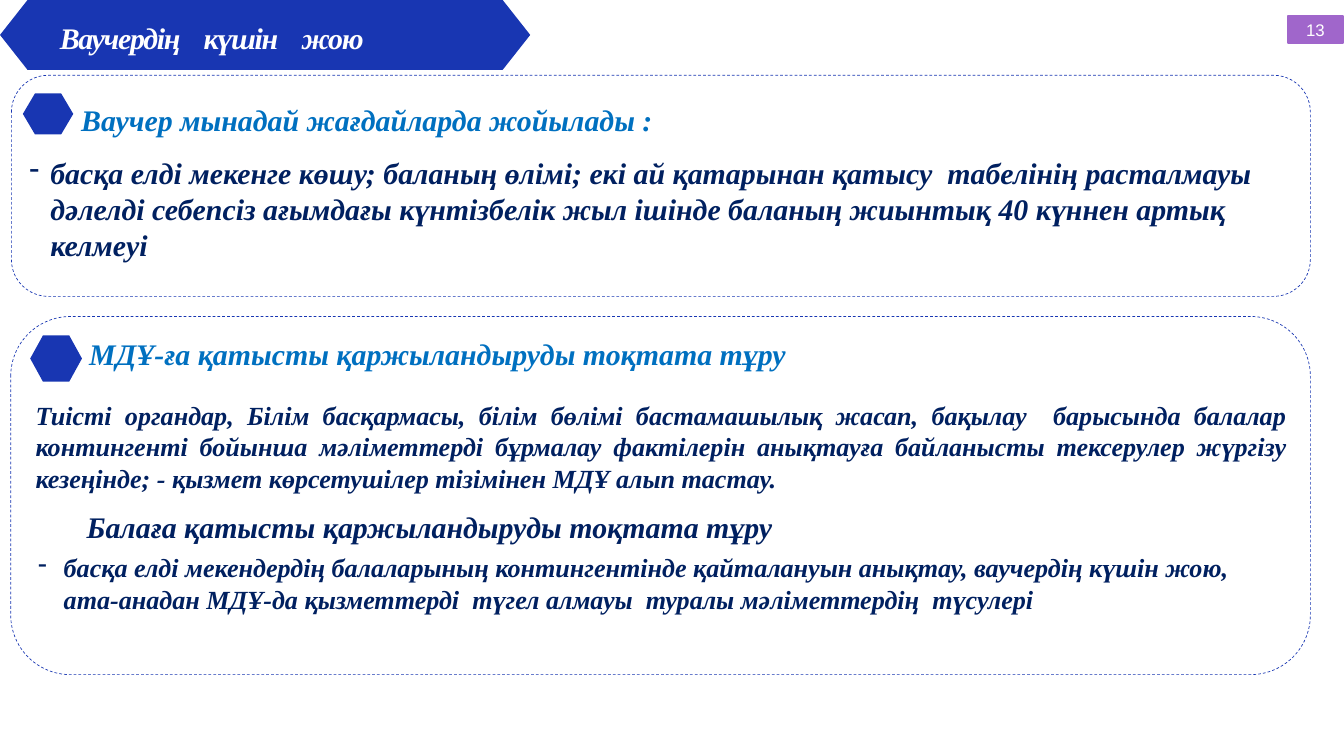
from lxml import etree
from pptx import Presentation
from pptx import util as u
from pptx.dml.color import RGBColor
from pptx.enum import dml, shapes, text
from pptx.oxml.ns import qn

BLUE, SKY, NAVY, WHITE, PURPLE = "1836B2", "0070C0", "002060", "FFFFFF", "A066CB"
SERIF = "Times New Roman"


def rgb(value):
    return RGBColor.from_string(value)


def add_run(p, words, size, color, font=SERIF, strong=True):
    r = p.add_run()
    r.text = words
    r.font.name = font
    r.font.size = u.Pt(size)
    r.font.bold = r.font.italic = strong
    r.font.color.rgb = rgb(color)
    return r


def add_text(s, box, words, size, color, wrap=True, align=text.PP_ALIGN.LEFT):
    sp = s.shapes.add_textbox(*map(u.Inches, box))
    tf = sp.text_frame
    tf.word_wrap = wrap
    p = tf.paragraphs[0]
    p.alignment = align
    add_run(p, words, size, color)
    return sp


def add_dash_item(s, box, words, size, indent):
    sp = add_text(s, box, words, size, NAVY)
    pPr = sp.text_frame.paragraphs[0]._p.get_or_add_pPr()
    pPr.set("marL", str(u.Inches(indent)))
    pPr.set("indent", str(-u.Inches(indent)))
    etree.SubElement(pPr, qn("a:buChar")).set("char", "-")


def add_title(s, box, words, stops):
    sp = add_text(s, box, "\t".join(words), 32, WHITE)
    tf = sp.text_frame
    tf.margin_left = tf.margin_right = tf.margin_top = tf.margin_bottom = 0
    p = tf.paragraphs[0]
    p.runs[0]._r.get_or_add_rPr().set("spc", "-140")
    tabs = etree.SubElement(p._p.get_or_add_pPr(), qn("a:tabLst"))
    for stop in stops:
        tab = etree.SubElement(tabs, qn("a:tab"))
        tab.set("pos", str(u.Inches(stop)))
        tab.set("algn", "l")


def add_hexagon(s, x, y, w, h, inset):
    points = [(x + inset, y), (x + w - inset, y), (x + w, y + h / 2),
              (x + w - inset, y + h), (x + inset, y + h), (x, y + h / 2)]
    points = [(u.Inches(px), u.Inches(py)) for px, py in points]
    fb = s.shapes.build_freeform(*points[0])
    fb.add_line_segments(points[1:], close=True)
    sp = fb.convert_to_shape()
    sp.shadow.inherit = False
    sp.fill.solid()
    sp.fill.fore_color.rgb = rgb(BLUE)
    sp.line.fill.background()


def add_panel(s, box):
    sp = s.shapes.add_shape(shapes.MSO_SHAPE.ROUNDED_RECTANGLE, *map(u.Inches, box))
    sp.shadow.inherit = False
    sp.fill.background()
    sp.line.color.rgb = rgb(BLUE)
    sp.line.width = u.Pt(0.75)
    sp.line.dash_style = dml.MSO_LINE.DASH


def add_page_number(s, box, number):
    sp = s.shapes.add_shape(shapes.MSO_SHAPE.RECTANGLE, *map(u.Inches, box))
    sp.shadow.inherit = False
    sp.fill.solid()
    sp.fill.fore_color.rgb = rgb(PURPLE)
    sp.line.color.rgb = rgb(PURPLE)
    sp.line.width = u.Pt(2)
    tf = sp.text_frame
    tf.vertical_anchor = text.MSO_ANCHOR.MIDDLE
    p = tf.paragraphs[0]
    p.alignment = text.PP_ALIGN.CENTER
    add_run(p, number, 18, WHITE, "Arial", False)


def main():
    prs = Presentation()
    prs.slide_width, prs.slide_height = u.Inches(20), u.Inches(11.25)
    s = prs.slides.add_slide(prs.slide_layouts[6])

    add_hexagon(s, 0, 0, 7.89, 1.04, 0.41)
    add_title(s, (0.89, 0.29, 7.17, 0.54), ["Ваучердің", "күшін", "жою"], [2.14, 3.6])

    add_dash_item(
        s, (0.34, 2.25, 19.16, 1.72),
        "басқа елді мекенге көшу; баланың өлімі; екі ай қатарынан қатысу  табелінің "
        "расталмауы дәлелді себепсіз ағымдағы күнтізбелік жыл ішінде баланың жиынтық "
        "40 күннен артық келмеуі", 32, 0.31)
    add_panel(s, (0.17, 1.12, 19.33, 3.29))
    add_hexagon(s, 0.34, 1.39, 0.75, 0.61, 0.18)
    add_text(s, (1.11, 1.46, 8.78, 0.64), "Ваучер мынадай жағдайларда жойылады :",
             32, SKY, wrap=False)

    add_panel(s, (0.16, 4.71, 19.34, 5.33))
    add_hexagon(s, 0.45, 4.99, 0.77, 0.69, 0.19)
    add_text(s, (1.23, 4.94, 10.67, 0.64), "МДҰ-ға қатысты қаржыландыруды тоқтата тұру",
             32, SKY, wrap=False)
    add_text(
        s, (0.43, 5.89, 18.81, 1.51),
        "Тиісті органдар, Білім басқармасы, білім бөлімі бастамашылық жасап, бақылау  "
        "барысында балалар контингенті бойынша мәліметтерді бұрмалау фактілерін "
        "анықтауға байланысты тексерулер жүргізу кезеңінде; - қызмет көрсетушілер "
        "тізімінен МДҰ алып тастау.", 28, NAVY, align=text.PP_ALIGN.JUSTIFY)
    add_dash_item(
        s, (0.47, 8.16, 18.57, 1.04),
        "басқа елді мекендердің балаларының контингентінде қайталануын анықтау, "
        "ваучердің күшін жою, ата-анадан МДҰ-да қызметтерді  түгел алмауы  туралы "
        "мәліметтердің  түсулері", 28, 0.38)
    add_text(s, (1.19, 7.52, 10.51, 0.64), "Балаға қатысты қаржыландыруды тоқтата тұру",
             32, NAVY, wrap=False)

    add_page_number(s, (19.17, 0.24, 0.81, 0.4), "13")
    prs.save("out.pptx")


if __name__ == "__main__":
    main()
